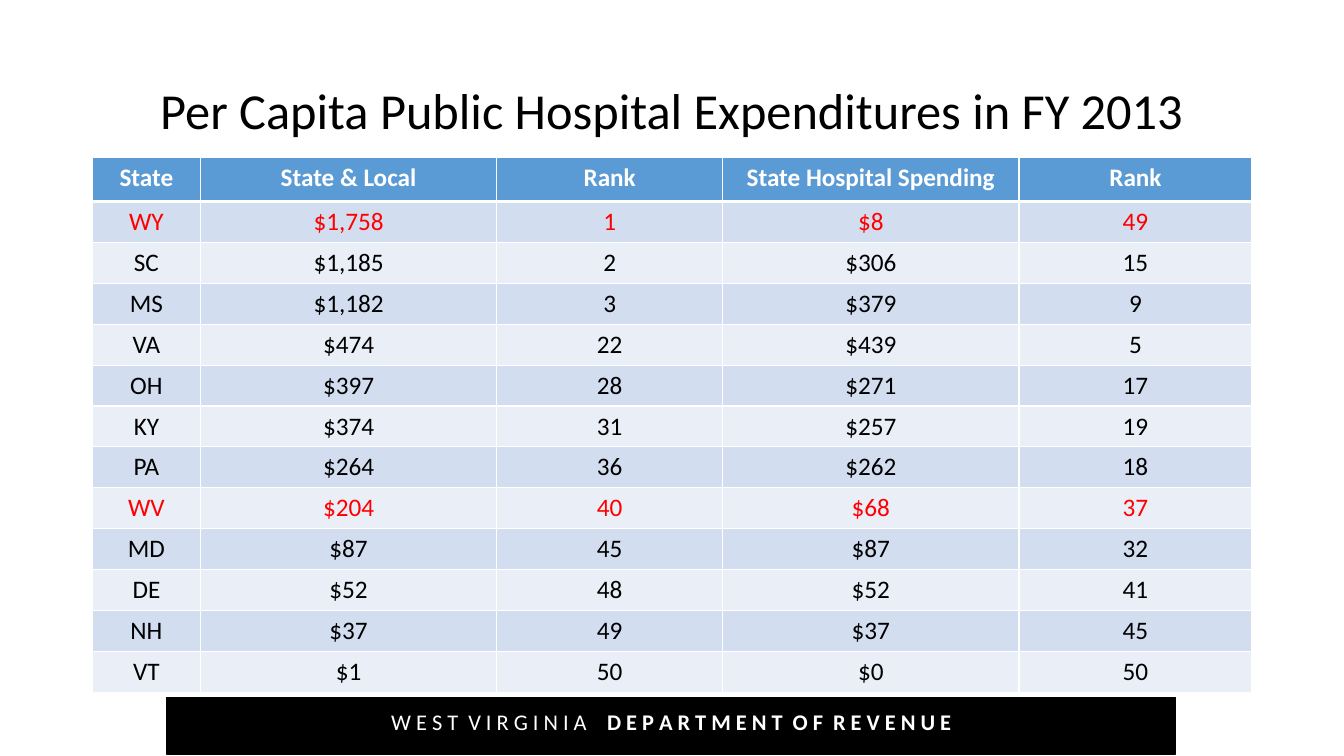
from lxml import etree
from pptx import Presentation
from pptx.dml.color import RGBColor
from pptx.enum.shapes import MSO_SHAPE
from pptx.enum.text import MSO_ANCHOR, PP_ALIGN
from pptx.oxml.ns import qn
from pptx.util import Cm, Pt

RECT = MSO_SHAPE.RECTANGLE
CENTER = PP_ALIGN.CENTER
MIDDLE = MSO_ANCHOR.MIDDLE
TITLE_ONLY = 5

BLACK, WHITE, RED = "000000", "FFFFFF", "FF0000"
HEADER_FILL = "5B9BD5"
BAND_FILLS = ["D2DEEF", "EAEFF7"]
HIGHLIGHTED = {"WY", "WV"}

COLUMN_WIDTHS = [2.72, 7.47, 5.69, 7.47, 5.87]
HEADER_HEIGHT, ROW_HEIGHT = 1.12, 1.03
HEADINGS = ["State", "State & Local", "Rank", "State Hospital Spending", "Rank"]
SPENDING = [
    ("WY", "$1,758", "1", "$8", "49"),
    ("SC", "$1,185", "2", "$306", "15"),
    ("MS", "$1,182", "3", "$379", "9"),
    ("VA", "$474", "22", "$439", "5"),
    ("OH", "$397", "28", "$271", "17"),
    ("KY", "$374", "31", "$257", "19"),
    ("PA", "$264", "36", "$262", "18"),
    ("WV", "$204", "40", "$68", "37"),
    ("MD", "$87", "45", "$87", "32"),
    ("DE", "$52", "48", "$52", "41"),
    ("NH", "$37", "49", "$37", "45"),
    ("VT", "$1", "50", "$0", "50"),
]


def rgb(color):
    return RGBColor.from_string(color)


def add_text(p, text, size=18, color=BLACK, bold=False):
    p.alignment = CENTER
    r = p.add_run()
    r.text = text
    r.font.name = "Calibri"
    r.font.size = Pt(size)
    r.font.bold = bold
    r.font.color.rgb = rgb(color)


def set_title(s, text):
    sp = s.shapes.title
    sp.left, sp.top, sp.width, sp.height = Cm(2.33), Cm(1.01), Cm(29.21), Cm(3.68)
    tf = sp.text_frame
    tf.vertical_anchor = MIDDLE
    tf.paragraphs[0].line_spacing = 0.9
    add_text(tf.paragraphs[0], text, size=36)


def set_borders(cell, bottom):
    tc_pr = cell._tc.get_or_add_tcPr()
    widths = {"a:lnL": 1, "a:lnR": 1, "a:lnT": 1, "a:lnB": bottom}
    for i, (tag, width) in enumerate(widths.items()):
        ln = etree.Element(qn(tag), w=str(Pt(width)))
        fill = etree.SubElement(ln, qn("a:solidFill"))
        etree.SubElement(fill, qn("a:srgbClr"), val=WHITE)
        tc_pr.insert(i, ln)


def fill_row(row, values, fill, color, bold=False, bottom=1):
    for cell, value in zip(row.cells, values):
        cell.fill.solid()
        cell.fill.fore_color.rgb = rgb(fill)
        add_text(cell.text_frame.paragraphs[0], value, color=color, bold=bold)
        set_borders(cell, bottom)


def add_spending_table(s):
    height = HEADER_HEIGHT + ROW_HEIGHT * len(SPENDING)
    table = s.shapes.add_table(
        len(SPENDING) + 1, len(HEADINGS),
        Cm(2.33), Cm(3.96), Cm(sum(COLUMN_WIDTHS)), Cm(height)).table
    for column, width in zip(table.columns, COLUMN_WIDTHS):
        column.width = Cm(width)
    header, *body = table.rows
    header.height = Cm(HEADER_HEIGHT)
    fill_row(header, HEADINGS, HEADER_FILL, WHITE, bold=True, bottom=3)
    for i, (row, values) in enumerate(zip(body, SPENDING)):
        row.height = Cm(ROW_HEIGHT)
        color = RED if values[0] in HIGHLIGHTED else BLACK
        fill_row(row, values, BAND_FILLS[i % 2], color)


def add_footer(s):
    group = s.shapes.add_group_shape()
    bar = group.shapes.add_shape(RECT, Cm(4.19), Cm(17.58), Cm(25.43), Cm(1.42))
    bar.shadow.inherit = False
    bar.fill.solid()
    bar.fill.fore_color.rgb = rgb(BLACK)
    bar.line.color.rgb = rgb(BLACK)
    bar.line.width = Pt(1)
    tf = group.shapes.add_textbox(Cm(4.22), Cm(17.73), Cm(25.4), Cm(1.3)).text_frame
    tf.word_wrap = True
    p = tf.paragraphs[0]
    add_text(p, "W E S T  V I R G I N I A    ", size=16, color=WHITE)
    add_text(p, "D E P A R T M E N T  O F  R E V E N U E", size=16, color=WHITE, bold=True)


def main():
    prs = Presentation()
    prs.slide_width, prs.slide_height = Cm(33.87), Cm(19.05)
    s = prs.slides.add_slide(prs.slide_layouts[TITLE_ONLY])
    set_title(s, "Per Capita Public Hospital Expenditures in FY 2013")
    add_spending_table(s)
    add_footer(s)
    prs.save("out.pptx")


if __name__ == "__main__":
    main()
